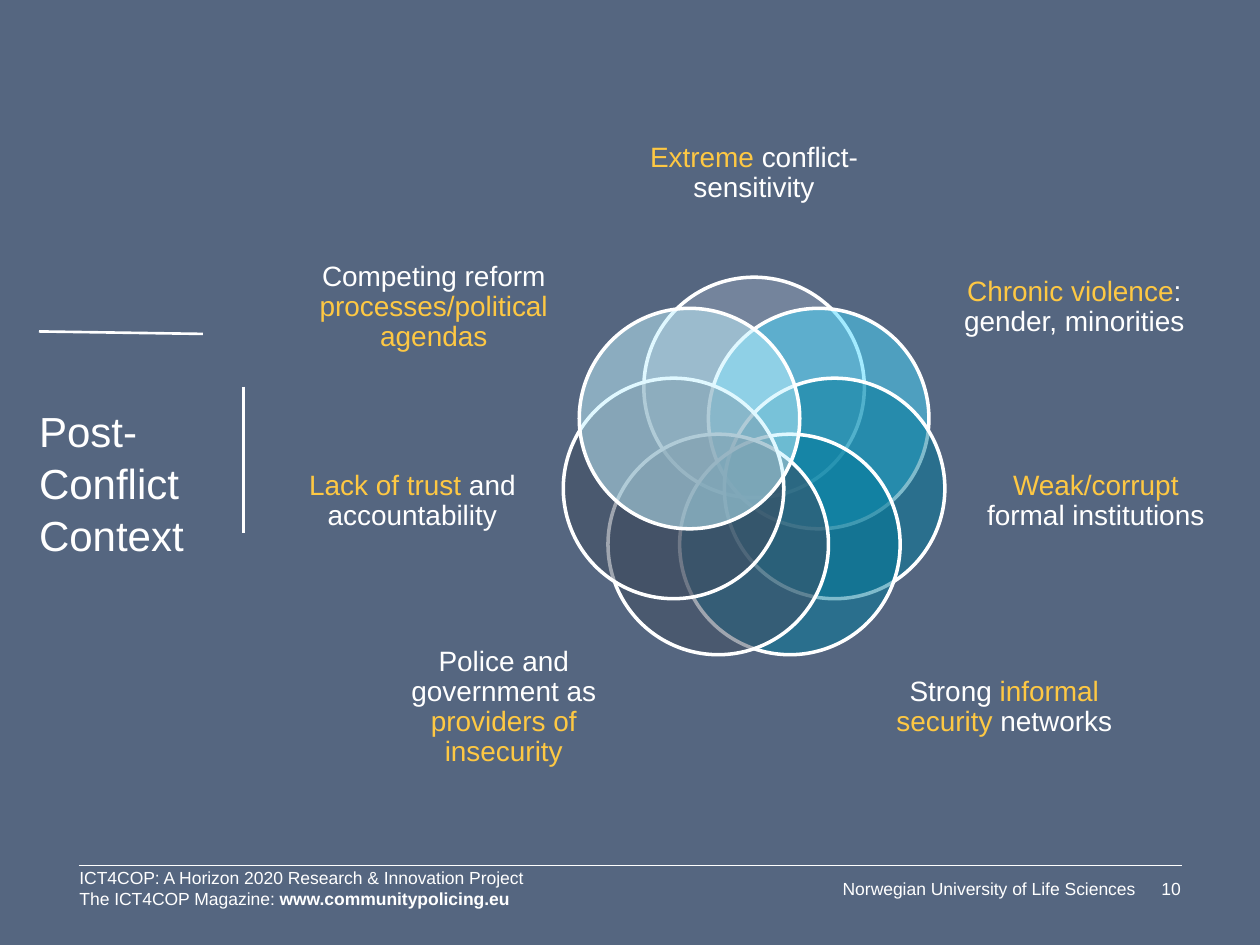
"""Build the post-conflict context slide with a ring of seven overlapping circles."""
from dataclasses import dataclass
from math import cos, pi, sin

from lxml.etree import SubElement
from pptx import Presentation
from pptx.dml.color import RGBColor
from pptx.enum.shapes import MSO_CONNECTOR, MSO_SHAPE
from pptx.enum.text import MSO_ANCHOR, MSO_AUTO_SIZE, PP_ALIGN
from pptx.oxml.ns import qn
from pptx.util import Pt


@dataclass(frozen=True)
class Theme:
    font: str = "Arial"
    background: str = "556680"
    white: str = "FFFFFF"
    accent: str = "FEC843"
    title_size: int = 24
    label_size: int = 16
    footer_size: int = 10


THEME = Theme()
TITLE = "Post-Conflict Context"
FACTORS = [
    ("94A2B8", [("Extreme ", True), ("conflict-sensitivity", False)]),
    ("48D8FF", [("Chronic violence", True), (": gender, minorities", False)]),
    ("00799A", [("Weak/corrupt", True), (" formal institutions", False)]),
    ("00799A", [("Strong ", False), ("informal security", True), (" networks", False)]),
    ("404D60", [("Police and government as ", False), ("providers of insecurity", True)]),
    ("404D60", [("Lack of trust ", True), ("and accountability", False)]),
    ("C2F2FF", [("Competing reform ", False), ("processes/political agendas", True)]),
]
PROJECT = [
    [("ICT4COP: A Horizon 2020 Research & Innovation Project", False)],
    [("The ICT4COP Magazine: ", False), ("www.communitypolicing.eu", True)],
]
UNIVERSITY = [[("Norwegian University of Life Sciences", False)]]
PAGE_NUMBER = [[("10", False)]]

CENTER_X, CENTER_Y = 430.9, 268.6
RING_RADIUS, DIAMETER = 47.2, 126
LABEL_ROWS = [(0, 99, 144, 77), (183, 175.7, 136, 85),
              (195.3, 286.6, 134, 91), (143, 404.3, 144, 83)]
RULES = [((45, 494.6), (675.4, 494.6), 1),
         ((139, 221), (139, 304.6), 1.5),
         ((22.3, 189.4), (115.9, 190.8), 1.5)]


def write(frame, paragraphs, size, align=PP_ALIGN.LEFT, anchor=MSO_ANCHOR.MIDDLE,
          spacing=None, after=None, emphasis=None, grow=False):
    """Fill a text frame with paragraphs of (text, emphasised) spans."""
    frame.word_wrap = True
    frame.auto_size = MSO_AUTO_SIZE.SHAPE_TO_FIT_TEXT if grow else MSO_AUTO_SIZE.NONE
    frame.vertical_anchor = anchor
    frame.margin_left = frame.margin_right = frame.margin_top = frame.margin_bottom = 0
    for index, spans in enumerate(paragraphs):
        paragraph = frame.add_paragraph() if index else frame.paragraphs[0]
        paragraph.alignment = align
        if spacing:
            paragraph.line_spacing = spacing
        if after:
            paragraph.space_after = Pt(after)
        for text, emphasised in spans:
            span = paragraph.add_run()
            span.text = text
            span.font.name = THEME.font
            span.font.size = Pt(size)
            span.font.bold = emphasised and emphasis is None
            color = emphasis if emphasised and emphasis else THEME.white
            span.font.color.rgb = RGBColor.from_string(color)


def add_text(page, area, paragraphs, size, **formatting):
    """Add a text box at left, top, width and height."""
    box = page.shapes.add_textbox(*map(Pt, area))
    write(box.text_frame, paragraphs, size, **formatting)


def add_rule(page, start, end, width):
    """Draw a plain white line."""
    rule = page.shapes.add_connector(MSO_CONNECTOR.STRAIGHT, *map(Pt, start + end))
    rule.line.color.rgb = RGBColor.from_string(THEME.white)
    rule.line.width = Pt(width)
    SubElement(rule.element.spPr, qn("a:effectLst"))


def add_circle(page, center_x, center_y, color):
    """Draw a half-transparent circle with a white outline."""
    circle = page.shapes.add_shape(
        MSO_SHAPE.OVAL, Pt(center_x - DIAMETER / 2), Pt(center_y - DIAMETER / 2),
        Pt(DIAMETER), Pt(DIAMETER))
    circle.shadow.inherit = False
    circle.fill.solid()
    circle.fill.fore_color.rgb = RGBColor.from_string(color)
    tint = circle.element.spPr.find(qn("a:solidFill")).find(qn("a:srgbClr"))
    SubElement(tint, qn("a:alpha")).set("val", "50000")
    circle.line.color.rgb = RGBColor.from_string(THEME.white)
    circle.line.width = Pt(2)


def add_factors(page):
    """Place the circles clockwise from the top, with mirrored labels around them."""
    count = len(FACTORS)
    for index, (color, spans) in enumerate(FACTORS):
        angle = 2 * pi * index / count
        add_circle(page, CENTER_X + RING_RADIUS * sin(angle),
                   CENTER_Y - RING_RADIUS * cos(angle), color)
        offset, middle, width, height = LABEL_ROWS[min(index, count - index)]
        side = 1 if index <= count / 2 else -1
        area = (CENTER_X + side * offset - width / 2, middle - height / 2, width, height)
        add_text(page, area, [spans], THEME.label_size, align=PP_ALIGN.CENTER,
                 spacing=0.9, after=5.6, emphasis=THEME.accent)


def main():
    """Assemble and save the deck."""
    deck = Presentation()
    deck.slide_width, deck.slide_height = Pt(720), Pt(540)
    page = deck.slides.add_slide(deck.slide_layouts[5])
    page.background.fill.solid()
    page.background.fill.fore_color.rgb = RGBColor.from_string(THEME.background)

    title = page.shapes.title
    title.left, title.top, title.width, title.height = map(Pt, (22.3, 230.4, 127.4, 96.5))
    write(title.text_frame, [[(TITLE, False)]], THEME.title_size,
          anchor=MSO_ANCHOR.TOP, spacing=1.04)

    add_text(page, (421.2, 501.8, 227.5, 12.2), UNIVERSITY, THEME.footer_size,
             align=PP_ALIGN.RIGHT, grow=True)
    add_text(page, (650.9, 501.8, 23.8, 12.2), PAGE_NUMBER, THEME.footer_size,
             align=PP_ALIGN.RIGHT, grow=True)
    add_text(page, (45.4, 495.4, 374.4, 24.5), PROJECT, THEME.footer_size, grow=True)

    add_factors(page)
    for start, end, width in RULES:
        add_rule(page, start, end, width)
    deck.save("out.pptx")


if __name__ == "__main__":
    main()
